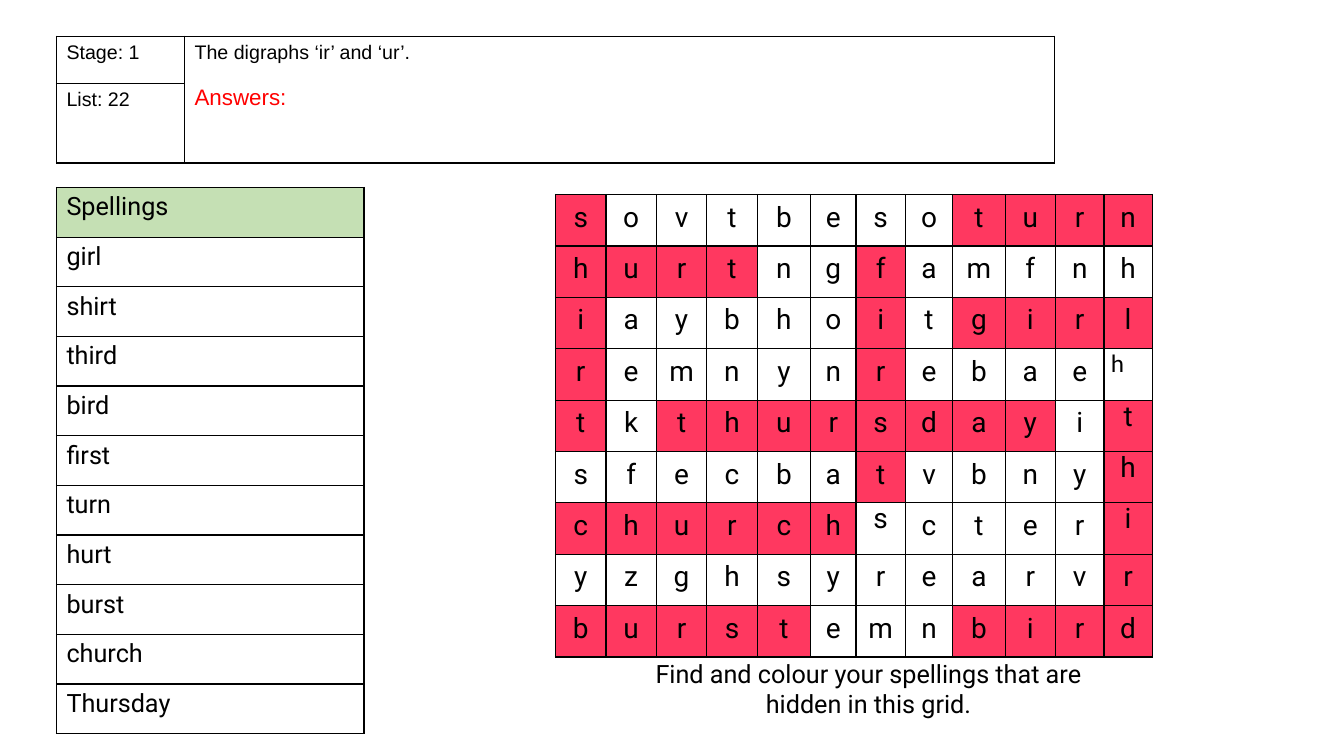
from lxml import etree
from pptx import Presentation
from pptx import util as u
from pptx.dml.color import RGBColor
from pptx.enum import text
from pptx.oxml.ns import qn

COLOURS = {
    "ink": "000000",
    "paper": "FFFFFF",
    "heading": "C5E0B4",
    "found": "FF3860",
    "answers": "FF0000",
}
SPELLINGS = ["girl", "shirt", "third", "bird", "first", "turn", "hurt",
             "burst", "church", "Thursday"]
# Capitals mark the letters of found words.
LETTER_ROWS = [
    "SovtbesoTURN",
    "HURTngFamfnh",
    "IaybhoItGIRL",
    "RemnynRebaeh",
    "TkTHURSDAYiT",
    "sfecbaTvbnyH",
    "CHURCHscterI",
    "yzghsyrearvR",
    "BURSTemnBIRD",
]
LETTER_WIDTHS = [0.5, 0.5, 0.5, 0.5, 0.53, 0.45, 0.49, 0.47, 0.52, 0.5, 0.48, 0.48]
SINGLE_SPACED = {(4, 11), (5, 11), (6, 6), (6, 11)}
SMALL_LETTER = (3, 11)


def colour(name):
    return RGBColor.from_string(COLOURS[name])


def write(paragraph, words, size, font, ink="ink"):
    run = paragraph.add_run()
    run.text = words
    run.font.size = u.Pt(size)
    run.font.name = font
    run.font.color.rgb = colour(ink)


def paint_cell(cell, fill="paper"):
    properties = cell._tc.get_or_add_tcPr()
    for side in ("lnL", "lnR", "lnT", "lnB"):
        border = etree.SubElement(properties, qn(f"a:{side}"), w=str(u.Pt(1)))
        solid = etree.SubElement(border, qn("a:solidFill"))
        etree.SubElement(solid, qn("a:srgbClr"), val=COLOURS["ink"])
    cell.fill.solid()
    cell.fill.fore_color.rgb = colour(fill)


def add_grid(slide, left, top, widths, heights):
    frame = slide.shapes.add_table(
        len(heights), len(widths), u.Inches(left), u.Inches(top),
        u.Inches(sum(widths)), u.Inches(sum(heights)))
    grid = frame.table
    grid.first_row = False
    grid.horz_banding = False
    for column, width in zip(grid.columns, widths):
        column.width = u.Inches(width)
    for row, height in zip(grid.rows, heights):
        row.height = u.Inches(height)
    return grid


def add_header(slide):
    header = add_grid(slide, 0.56, 0.36, [1.27, 8.63], [0.47, 0.78])
    for cell in header.iter_cells():
        paint_cell(cell)
    topic = header.cell(0, 1)
    topic.merge(header.cell(1, 1))
    for row, label in enumerate(["Stage: 1", "List: 22"]):
        write(header.cell(row, 0).text_frame.paragraphs[0], label, 14, "Arial")
    write(topic.text_frame.paragraphs[0], "The digraphs ‘ir’ and ‘ur’.", 14, "Arial")
    answers = topic.text_frame.add_paragraph()
    answers.space_before = u.Pt(16)
    write(answers, "Answers:", 16, "Arial", "answers")


def add_spellings(slide):
    entries = ["Spellings"] + SPELLINGS
    spellings = add_grid(slide, 0.56, 1.86, [3.05], [5.42 / len(entries)] * len(entries))
    for row, entry in enumerate(entries):
        cell = spellings.cell(row, 0)
        paint_cell(cell, "paper" if row else "heading")
        write(cell.text_frame.paragraphs[0], entry, 18, "Roboto")


def add_letter(cell, letter, place):
    paint_cell(cell, "found" if letter.isupper() else "paper")
    cell.margin_left = cell.margin_right = u.Inches(0.07)
    cell.margin_top = cell.margin_bottom = 0
    paragraph = cell.text_frame.paragraphs[0]
    if place == SMALL_LETTER:
        write(paragraph, letter, 18, "Calibri")
        return
    paragraph.alignment = text.PP_ALIGN.CENTER
    if place not in SINGLE_SPACED:
        paragraph.line_spacing = 1.2
        paragraph.space_after = u.Pt(10)
    write(paragraph, letter.lower(), 20, "Roboto")


def add_word_search(slide):
    puzzle = add_grid(slide, 5.51, 1.93, LETTER_WIDTHS, [0.51] * len(LETTER_ROWS))
    for row, letters in enumerate(LETTER_ROWS):
        for column, letter in enumerate(letters):
            add_letter(puzzle.cell(row, column), letter, (row, column))


def add_instruction(slide):
    box = slide.shapes.add_textbox(
        u.Inches(6.13), u.Inches(6.48), u.Inches(4.97), u.Inches(0.71))
    instruction = box.text_frame
    instruction.word_wrap = True
    instruction.auto_size = text.MSO_AUTO_SIZE.SHAPE_TO_FIT_TEXT
    paragraph = instruction.paragraphs[0]
    paragraph.alignment = text.PP_ALIGN.CENTER
    write(paragraph, "Find and colour your spellings that are hidden in this grid.",
          18, "Roboto")


def main():
    deck = Presentation()
    deck.slide_width = u.Inches(13.33)
    deck.slide_height = u.Inches(7.5)
    slide = deck.slides.add_slide(deck.slide_layouts[6])
    add_spellings(slide)
    add_header(slide)
    add_word_search(slide)
    add_instruction(slide)
    deck.save("out.pptx")


if __name__ == "__main__":
    main()
